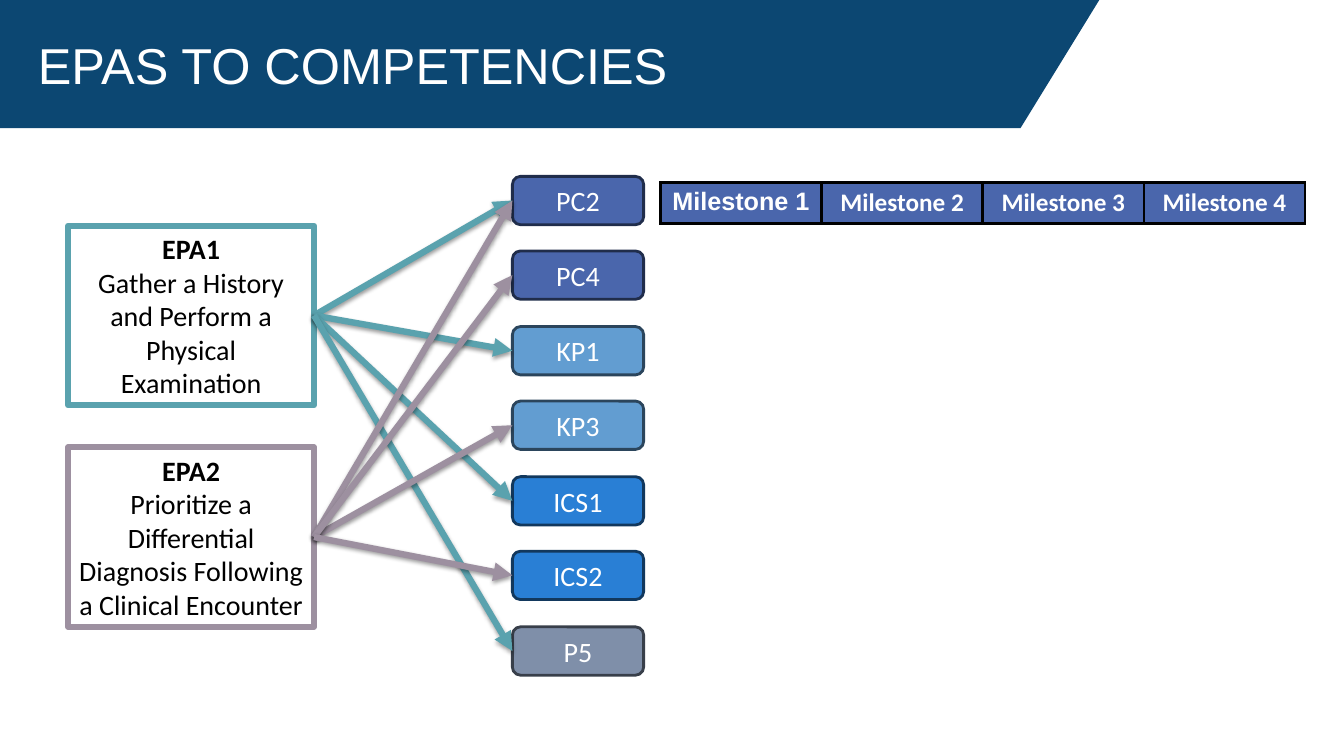
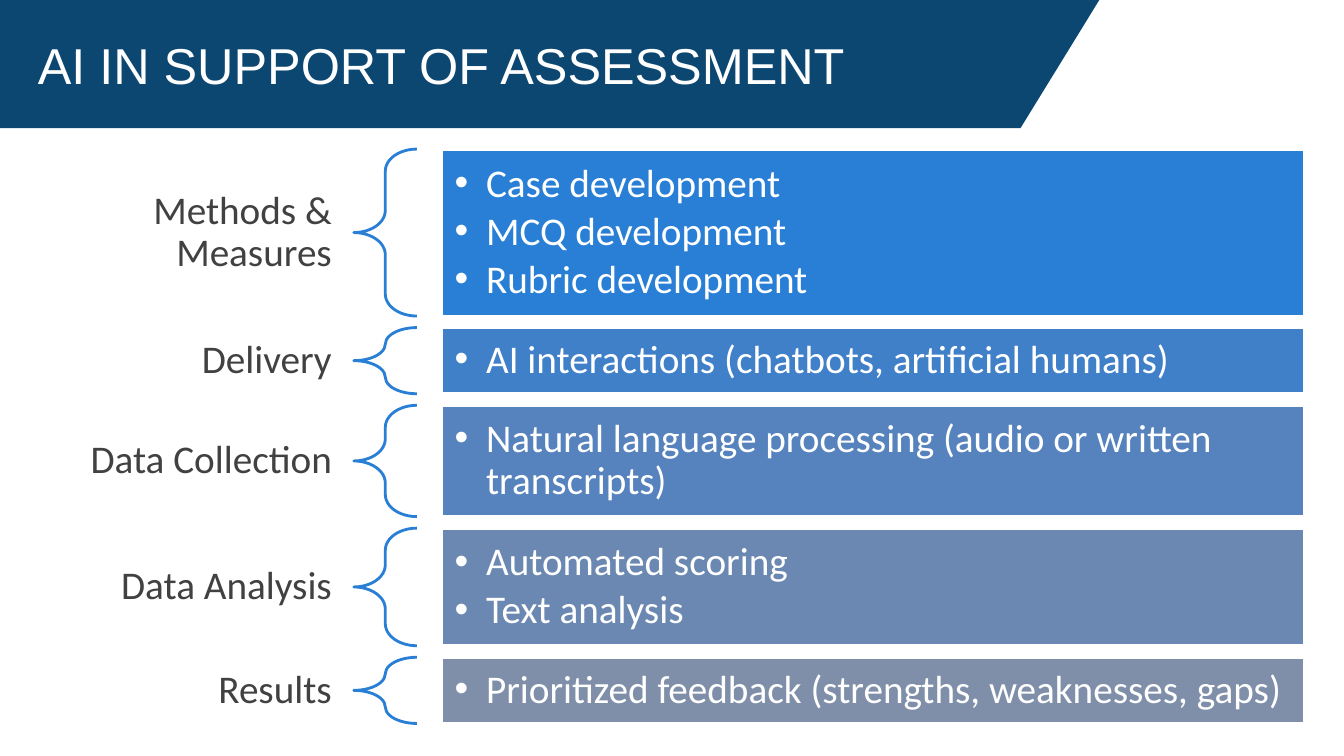
from lxml.etree import SubElement
from pptx import Presentation
from pptx.dml.color import RGBColor
from pptx.enum.shapes import MSO_CONNECTOR, MSO_SHAPE
from pptx.enum.text import MSO_ANCHOR, PP_ALIGN
from pptx.oxml import parse_xml
from pptx.oxml.ns import nsdecls, qn
from pptx.util import Pt

PX = 9525
NAVY, WHITE, BLACK = "0C4772", "FFFFFF", "000000"
INDIGO, SKY, BLUE, SLATE = "4A66AC", "629DD1", "297FD5", "7F8FA9"
TEAL, MAUVE, GREY = "5AA2AE", "9D90A0", "414141"
rgb = RGBColor.from_string


def box(slide, kind, area, fill, edge, width, inset=5):
    shape = slide.shapes.add_shape(kind, *[n * PX for n in area])
    shape.shadow.inherit = False
    if fill:
        shape.fill.solid()
        shape.fill.fore_color.rgb = rgb(fill)
    else:
        shape.fill.background()
    shape.line.color.rgb = rgb(edge)
    shape.line.width = Pt(width)
    frame = shape.text_frame
    frame.margin_left = frame.margin_right = inset * PX
    frame.margin_top = frame.margin_bottom = inset * PX
    return shape


def write(frame, text, size, color, align=PP_ALIGN.CENTER, font="Calibri", space=None):
    frame.text = text
    for par in frame.paragraphs:
        par.alignment = align
        par.line_spacing = space
        for run in par.runs:
            run.font.name = font
            run.font.size = Pt(size)
            run.font.color.rgb = rgb(color)


deck = Presentation()
deck.slide_width, deck.slide_height = 1280 * PX, 720 * PX

# Shared layout: title place
layout = deck.slide_layouts[5]
head = layout.placeholders[0]
head.left, head.top, head.width, head.height = [n * PX for n in (36, 20, 943, 94)]
frame = head.text_frame
frame.margin_left = frame.margin_right = frame.margin_top = frame.margin_bottom = 0
frame.vertical_anchor = MSO_ANCHOR.MIDDLE

# Slides with their titles
slides = []
for title in ("EPAS TO COMPETENCIES", "AI IN SUPPORT OF ASSESSMENT"):
    slide = deck.slides.add_slide(layout)
    write(slide.shapes.title.text_frame, title, 36, WHITE, PP_ALIGN.LEFT, "Arial", 0.8)
    slides.append(slide)
first, second = slides

# Shared layout: slanted band behind the title
pen = first.shapes.build_freeform(1047, 0, scale=PX)
pen.add_line_segments([(0, 0), (0, 122), (972, 122)], close=True)
band = pen.convert_to_shape()
band.shadow.inherit = False
band.fill.solid()
band.fill.fore_color.rgb = rgb(NAVY)
band.line.fill.background()
layout.shapes.element.insert(2, band.element)

# Competency boxes
skills = [
    ("PC2", INDIGO, "202D4B"), ("PC4", INDIGO, "202D4B"),
    ("KP1", SKY, "2B455C"), ("KP3", SKY, "2B455C"),
    ("ICS1", BLUE, "12385D"), ("ICS2", BLUE, "12385D"),
    ("P5", SLATE, "383F4A"),
]
goals = {}
for i, (name, fill, edge) in enumerate(skills):
    area = (488, 168 + i * 143 // 2, 125, 46)
    goals[name] = box(first, MSO_SHAPE.ROUNDED_RECTANGLE, area, fill, edge, 2)
    write(goals[name].text_frame, name, 20, WHITE)

# Activity boxes and their arrows
tasks = [
    ("EPA1\nGather a History and Perform a Physical Examination",
     215, TEAL, ("PC2", "KP1", "ICS1", "P5")),
    ("EPA2\nPrioritize a Differential Diagnosis Following a Clinical Encounter",
     426, MAUVE, ("KP3", "PC2", "PC4", "ICS2")),
]
for text, top, color, links in tasks:
    task = box(first, MSO_SHAPE.RECTANGLE, (65, top, 234, 171), WHITE, color, 4.5)
    write(task.text_frame, text, 20, BLACK)
    task.text_frame.paragraphs[0].runs[0].font.bold = True
    for name in links:
        arrow = first.shapes.add_connector(MSO_CONNECTOR.STRAIGHT, 0, 0, 0, 0)
        arrow.begin_connect(task, 3)
        arrow.end_connect(goals[name], 1)
        arrow.line.color.rgb = rgb(color)
        arrow.line.width = Pt(4.5)
        props = arrow.element.spPr
        SubElement(props.find(qn("a:ln")), qn("a:tailEnd"), type="triangle")
        props.append(parse_xml(
            f'<a:effectLst {nsdecls("a")}><a:outerShdw blurRad="38100" dist="20000" '
            f'dir="5400000" rotWithShape="0"><a:srgbClr val="{BLACK}">'
            '<a:alpha val="38000"/></a:srgbClr></a:outerShdw></a:effectLst>'))

# Milestone table
table = first.shapes.add_table(1, 4, *[n * PX for n in (629, 174, 614, 39)]).table
for i, cell in enumerate(table.rows[0].cells):
    write(cell.text_frame, f"Milestone {i + 1}", 18, WHITE,
          font="Calibri" if i else "Arial")
    cell.text_frame.paragraphs[0].runs[0].font.bold = True
    props = cell._tc.get_or_add_tcPr()
    for side in "LRTB":
        props.append(parse_xml(
            f'<a:ln{side} {nsdecls("a")} w="28575"><a:solidFill>'
            f'<a:srgbClr val="{BLACK}"/></a:solidFill></a:ln{side}>'))
    cell.fill.solid()
    cell.fill.fore_color.rgb = rgb(INDIGO)

# Stages: label, brace and panel of bullets
stages = [
    ("Methods & Measures", 159, BLUE,
     "Case development\nMCQ development\nRubric development"),
    ("Delivery", 63, "4080C9", "AI interactions (chatbots, artificial humans)"),
    ("Data Collection", 106, "5683BD",
     "Natural language processing (audio or written transcripts)"),
    ("Data Analysis", 112, "6B88B2", "Automated scoring\nText analysis"),
    ("Results", 63, SLATE, "Prioritized feedback (strengths, weaknesses, gaps)"),
]
top = 142
for name, high, fill, items in stages:
    label = second.shapes.add_textbox(*[n * PX for n in (36, top, 301, high)])
    frame = label.text_frame
    frame.word_wrap = True
    frame.vertical_anchor = MSO_ANCHOR.MIDDLE
    frame.margin_left = frame.margin_right = 21 * PX
    write(frame, name, 28, GREY, PP_ALIGN.RIGHT, space=0.9)

    brace = box(second, MSO_SHAPE.LEFT_BRACE, (337, top, 60, high), None, BLUE, 2)
    brace.adjustments[0] = 0.35

    panel = box(second, MSO_SHAPE.RECTANGLE, (421, top, 821, high), fill, WHITE, 2, 12)
    write(panel.text_frame, items, 28, WHITE, PP_ALIGN.LEFT, space=0.9)
    for par in panel.text_frame.paragraphs:
        par.space_after = Pt(4)
        props = par._p.get_or_add_pPr()
        props.set("marL", str(30 * PX))
        props.set("indent", str(-30 * PX))
        SubElement(props, qn("a:buFont"), typeface="Arial")
        SubElement(props, qn("a:buChar"), char="•")
    top += high + 11

deck.save("out.pptx")
